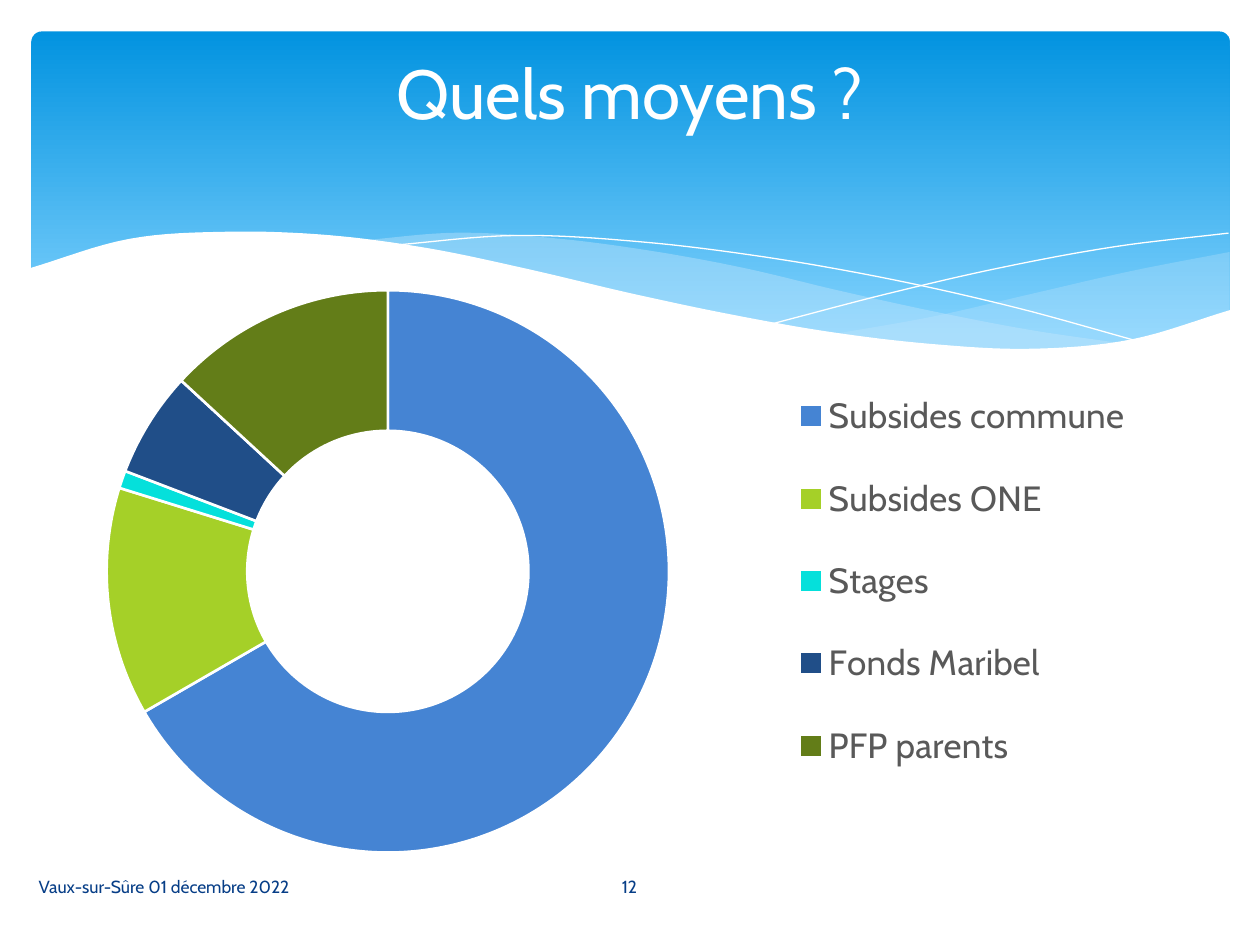
from lxml.etree import SubElement
from pptx import Presentation
from pptx.chart.data import CategoryChartData
from pptx.dml.color import RGBColor
from pptx.enum.chart import XL_CHART_TYPE, XL_LEGEND_POSITION
from pptx.enum.shapes import MSO_SHAPE
from pptx.enum.text import MSO_ANCHOR, PP_ALIGN
from pptx.oxml import parse_xml
from pptx.oxml.ns import nsdecls, qn
from pptx.util import Pt

FONT = "Cabin"
WHITE = RGBColor(0xFF, 0xFF, 0xFF)
SKY_TOP = RGBColor(0x02, 0x93, 0xE0)
SKY_BOTTOM = RGBColor(0x83, 0xD3, 0xFE)
MIST = RGBColor(0xC6, 0xE7, 0xFC)
GRAY = RGBColor(0x59, 0x59, 0x59)
NAVY = RGBColor(0x07, 0x3E, 0x87)

TITLE = "Quels moyens ?"
FOOTERS = [
    {"text": "Vaux-sur-Sûre 01 décembre 2022", "left": 15, "width": 298, "align": PP_ALIGN.LEFT},
    {"text": "12", "left": 314, "width": 91.4, "align": PP_ALIGN.CENTER},
]
FUNDING = [
    ("Subsides commune", 66, RGBColor(0x45, 0x84, 0xD3)),
    ("Subsides ONE", 13, RGBColor(0xA5, 0xD0, 0x28)),
    ("Stages", 1, RGBColor(0x05, 0xE0, 0xDB)),
    ("Fonds Maribel", 6, RGBColor(0x20, 0x4E, 0x88)),
    ("PFP parents", 13, RGBColor(0x63, 0x7D, 0x18)),
]
RING_AREA = {"x": 0.07, "y": 0.07, "w": 0.47, "h": 0.86}
LEGEND_AREA = {"x": 0.64, "y": 0.17, "w": 0.29, "h": 0.69}

# Each edge lists heights at equal steps between left and right.
WAVES = [
    {"left": 476, "right": 702.7, "color": MIST, "opacity": 29,
     "upper": [191, 181, 168, 155, 144],
     "lower": [191, 198, 200, 194, 178]},
    {"left": 206, "right": 643, "color": MIST, "opacity": 40,
     "upper": [137.5, 133, 136, 143, 153, 166, 178, 188.5, 196.5],
     "lower": [137.5, 146, 158, 170.5, 182, 191.5, 198, 200, 196.5]},
    {"left": 16.6, "right": 703.4, "color": WHITE, "opacity": 100,
     "upper": [153.4, 136.5, 132.4, 134.4, 142, 154, 167.5, 179.6, 189.7, 196.5, 199.3, 194, 177],
     "lower": [237, 237]},
]
THREADS = [
    {"left": 222.5, "right": 653, "heights": [140.4, 134.6, 138.2, 147, 159.7, 176, 195.8]},
    {"left": 441.4, "right": 702, "heights": [185, 168, 153, 141, 133.2]},
]
CURVE_STEPS = 8


def smooth_edge(left, right, heights):
    last = len(heights) - 1
    spacing = (right - left) / last
    slopes = [
        (heights[min(i + 1, last)] - heights[max(i - 1, 0)]) / (min(i + 1, last) - max(i - 1, 0))
        for i in range(last + 1)
    ]
    points = []
    for i in range(last):
        rise = heights[i + 1] - heights[i]
        for step in range(CURVE_STEPS):
            t = step / CURVE_STEPS
            eased_rise = rise * t * t * (3 - 2 * t)
            bend = t * (1 - t) * (slopes[i] * (1 - t) - slopes[i + 1] * t)
            points.append((left + (i + t) * spacing, heights[i] + eased_rise + bend))
    return points + [(right, heights[-1])]


def add_outline(slide, points, close):
    start, *rest = [(Pt(x), Pt(y)) for x, y in points]
    builder = slide.shapes.build_freeform(*start)
    builder.add_line_segments(rest, close=close)
    shape = builder.convert_to_shape()
    shape.shadow.inherit = False
    return shape


def add_wave(slide, left, right, upper, lower, color, opacity):
    upper_edge = smooth_edge(left, right, upper)
    lower_edge = smooth_edge(left, right, lower)
    shape = add_outline(slide, upper_edge + lower_edge[::-1], close=True)
    shape.line.fill.background()
    shape.fill.solid()
    shape.fill.fore_color.rgb = color
    color_element = shape._element.spPr.find(qn("a:solidFill"))[0]
    SubElement(color_element, qn("a:alpha"), val=str(opacity * 1000))


def add_thread(slide, left, right, heights):
    shape = add_outline(slide, smooth_edge(left, right, heights), close=False)
    shape.fill.background()
    shape.line.color.rgb = WHITE
    shape.line.width = Pt(0)


def add_sky(slide):
    sky = slide.shapes.add_shape(
        MSO_SHAPE.ROUNDED_RECTANGLE, Pt(18), Pt(18), Pt(684.7), Pt(194.4)
    )
    sky.adjustments[0] = 0.03
    sky.shadow.inherit = False
    sky.line.fill.background()
    sky.fill.gradient()
    sky.fill.gradient_angle = 270
    for stop, color, position in zip(sky.fill.gradient_stops, (SKY_TOP, SKY_BOTTOM), (0, 0.9)):
        stop.color.rgb = color
        stop.position = position


def write_text(shape, text, size, color, align, anchor):
    frame = shape.text_frame
    frame.word_wrap = True
    frame.vertical_anchor = anchor
    paragraph = frame.paragraphs[0]
    paragraph.alignment = align
    run = paragraph.add_run()
    run.text = text
    run.font.name = FONT
    run.font.size = Pt(size)
    run.font.color.rgb = color


def set_layout(previous_sibling, area, target=""):
    parent = previous_sibling.getparent()
    for old_layout in parent.findall(qn("c:layout")):
        parent.remove(old_layout)
    sizes = "".join(f'<c:{key} val="{value}"/>' for key, value in area.items())
    layout = parse_xml(
        f'<c:layout {nsdecls("c")}><c:manualLayout>{target}'
        f'<c:xMode val="edge"/><c:yMode val="edge"/>{sizes}</c:manualLayout></c:layout>'
    )
    previous_sibling.addnext(layout)
    return layout


def style_slices(plot):
    plot.vary_by_categories = True
    plot._element.find(qn("c:holeSize")).set("val", "75")
    for index, (name, value, color) in enumerate(FUNDING):
        slice_format = plot.series[0].points[index].format
        slice_format.fill.solid()
        slice_format.fill.fore_color.rgb = color
        slice_format.line.color.rgb = WHITE
        slice_format.line.width = Pt(1.5)


def add_funding_chart(slide):
    data = CategoryChartData()
    data.categories = [name for name, value, color in FUNDING]
    data.add_series("Series 1", [value for name, value, color in FUNDING])
    chart = slide.shapes.add_chart(
        XL_CHART_TYPE.DOUGHNUT, Pt(13), Pt(139.7), Pt(684), Pt(373.7), data
    ).chart
    chart.has_title = False
    chart.font.name = FONT
    chart.font.size = Pt(10)
    plot = chart.plots[0]
    style_slices(plot)

    chart.has_legend = True
    legend = chart.legend
    legend.position = XL_LEGEND_POSITION.BOTTOM
    legend.include_in_layout = False
    legend.font.name = FONT
    legend.font.size = Pt(20)
    legend.font.color.rgb = GRAY
    set_layout(legend._element.find(qn("c:legendPos")), LEGEND_AREA)

    ring_layout = set_layout(plot._element, RING_AREA, '<c:layoutTarget val="inner"/>')
    ring_layout.getparent().insert(0, ring_layout)


def main():
    presentation = Presentation()
    presentation.slide_width, presentation.slide_height = Pt(720), Pt(540)
    slide = presentation.slides.add_slide(presentation.slide_layouts[5])

    add_sky(slide)
    *mist_waves, white_wave = WAVES
    for wave in mist_waves:
        add_wave(slide, **wave)
    for thread in THREADS:
        add_thread(slide, **thread)
    add_wave(slide, **white_wave)

    title = slide.shapes.title
    title.left, title.top, title.width, title.height = Pt(36), Pt(25), Pt(648), Pt(98.6)
    write_text(title, TITLE, size=39.6, color=WHITE, align=PP_ALIGN.CENTER, anchor=MSO_ANCHOR.TOP)
    slide.shapes._spTree.append(title._element)

    add_funding_chart(slide)
    for footer in FOOTERS:
        box = slide.shapes.add_textbox(Pt(footer["left"]), Pt(492), Pt(footer["width"]), Pt(28.8))
        write_text(box, footer["text"], size=10, color=NAVY,
                   align=footer["align"], anchor=MSO_ANCHOR.MIDDLE)
    presentation.save("out.pptx")


if __name__ == "__main__":
    main()
